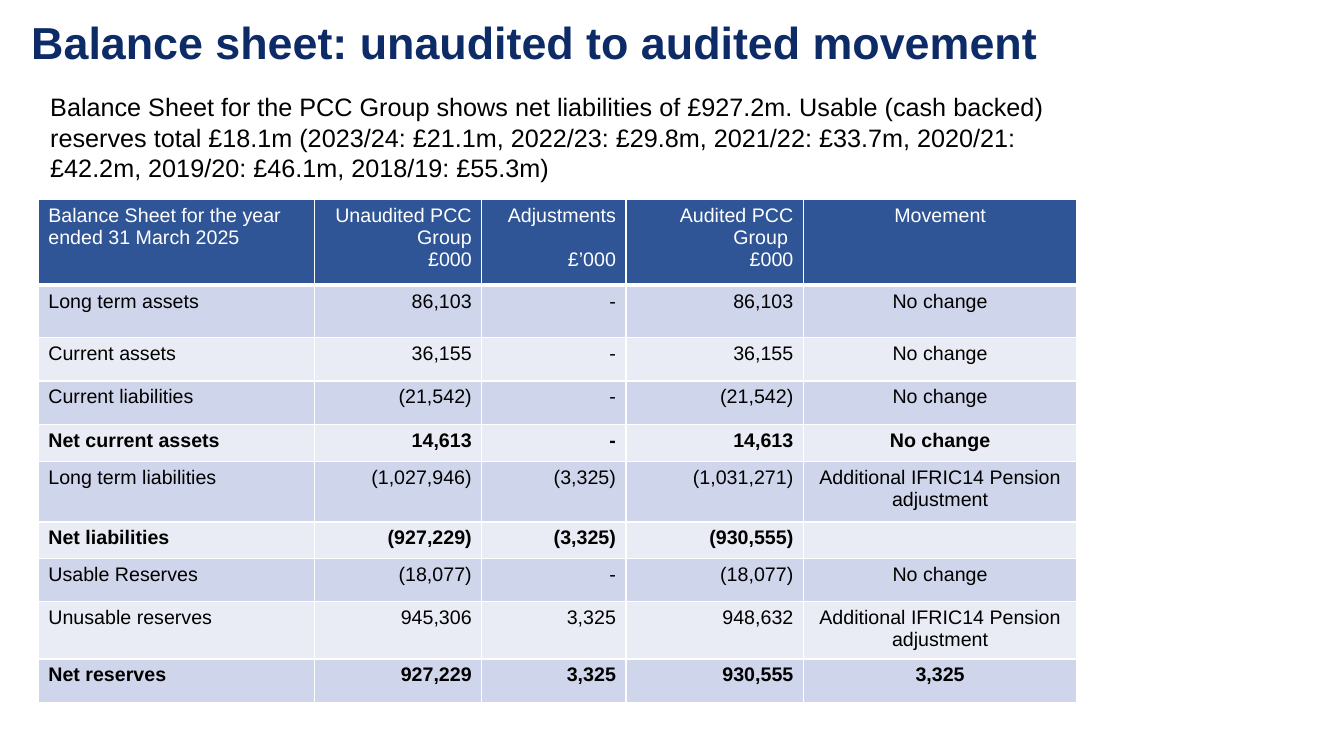
from lxml import etree
from pptx import Presentation
from pptx.dml.color import RGBColor
from pptx.enum.text import MSO_ANCHOR, MSO_AUTO_SIZE, PP_ALIGN
from pptx.oxml.ns import qn
from pptx.util import Inches, Pt

LEFT, CENTER, RIGHT = PP_ALIGN.LEFT, PP_ALIGN.CENTER, PP_ALIGN.RIGHT
MIDDLE = MSO_ANCHOR.MIDDLE
FIT_SHAPE = MSO_AUTO_SIZE.SHAPE_TO_FIT_TEXT

THEME = {
    "font": "Arial",
    "title": "0D2B67", "text": "000000", "white": "FFFFFF",
    "header": "2F5597", "bands": ("E9EBF5", "CFD5EA"),
    "title_size": 32, "body_size": 18, "table_size": 14,
}


def style(p, size, color, bold=False):
    for r in p.runs:
        r.font.name = THEME["font"]
        r.font.size = Pt(size)
        r.font.bold = bold
        r.font.color.rgb = RGBColor.from_string(color)


def add_borders(cell, widths):
    tcPr = cell._tc.get_or_add_tcPr()
    for i, (side, width) in enumerate(zip("LRTB", widths)):
        ln = etree.Element(qn(f"a:ln{side}"), w=str(Pt(width)))
        fill = etree.SubElement(ln, qn("a:solidFill"))
        etree.SubElement(fill, qn("a:srgbClr"), val=THEME["white"])
        tcPr.insert(i, ln)


prs = Presentation()
prs.slide_width, prs.slide_height = Inches(13.33), Inches(7.5)
s = prs.slides.add_slide(prs.slide_layouts[5])

# Title
title = s.shapes.title
title.left, title.top = Inches(0.21), Inches(0.13)
title.width, title.height = Inches(11.04), Inches(0.64)
tf = title.text_frame
tf.text = "Balance sheet: unaudited to audited movement"
tf.vertical_anchor = MIDDLE
p = tf.paragraphs[0]
p.alignment = LEFT
p.line_spacing = 0.9
style(p, THEME["title_size"], THEME["title"], True)

# Summary
summary = s.shapes.add_textbox(Inches(0.21), Inches(0.86), Inches(10.64), Inches(1.01))
tf = summary.text_frame
tf.word_wrap = True
tf.auto_size = FIT_SHAPE
tf.text = (
    "Balance Sheet for the PCC Group shows net liabilities of £927.2m. "
    "Usable (cash backed) reserves total £18.1m (2023/24: £21.1m, 2022/23: £29.8m, "
    "2021/22: £33.7m, 2020/21: £42.2m, 2019/20: £46.1m, 2018/19: £55.3m)"
)
p = tf.paragraphs[0]
p._p.get_or_add_pPr().set("marL", str(Inches(0.19)))
style(p, THEME["body_size"], THEME["text"])

# Balance sheet figures
PENSION = "Additional IFRIC14 Pension adjustment"
rows = [
    ("Balance Sheet for the year ended 31 March 2025", "Unaudited PCC Group\n£000",
     "Adjustments\n£’000", "Audited PCC Group \n£000", "Movement"),
    ("Long term assets", "86,103", "-", "86,103", "No change"),
    ("Current assets", "36,155", "-", "36,155", "No change"),
    ("Current liabilities", "(21,542)", "-", "(21,542)", "No change"),
    ("Net current assets", "14,613", "-", "14,613", "No change"),
    ("Long term liabilities", "(1,027,946)", "(3,325)", "(1,031,271)", PENSION),
    ("Net liabilities", "(927,229)", "(3,325)", "(930,555)", ""),
    ("Usable Reserves", "(18,077)", "-", "(18,077)", "No change"),
    ("Unusable reserves", "945,306", "3,325", "948,632", PENSION),
    ("Net reserves", "927,229", "3,325", "930,555", "3,325"),
]
col_widths = [2.74, 1.66, 1.43, 1.76, 2.71]
row_heights = [0.85, 0.52, 0.43, 0.43, 0.37, 0.6, 0.36, 0.43, 0.57, 0.43]
aligns = [LEFT, RIGHT, RIGHT, RIGHT, CENTER]

# Table
table = s.shapes.add_table(len(rows), len(col_widths), Inches(0.38), Inches(1.98),
                           Inches(sum(col_widths)), Inches(sum(row_heights))).table
for col, width in zip(table.columns, col_widths):
    col.width = Inches(width)
for i, (values, height) in enumerate(zip(rows, row_heights)):
    table.rows[i].height = Inches(height)
    is_header = i == 0
    fill = THEME["header"] if is_header else THEME["bands"][i % 2]
    color = THEME["white"] if is_header else THEME["text"]
    for j, value in enumerate(values):
        cell = table.cell(i, j)
        cell.fill.solid()
        cell.fill.fore_color.rgb = RGBColor.from_string(fill)
        add_borders(cell, (1, 1, 1, 3 if is_header else 1))
        cell.text_frame.text = value
        for p in cell.text_frame.paragraphs:
            p.alignment = aligns[j]
            style(p, THEME["table_size"], color, values[0].startswith("Net "))
        if not value:
            # Keep the empty cell from stretching its row
            etree.SubElement(p._p, qn("a:endParaRPr"), sz=str(THEME["table_size"] * 100))

# Line up the units under the one-line heading with its neighbours
table.cell(0, 2).text_frame.paragraphs[1].space_before = Pt(16)

prs.save("out.pptx")
